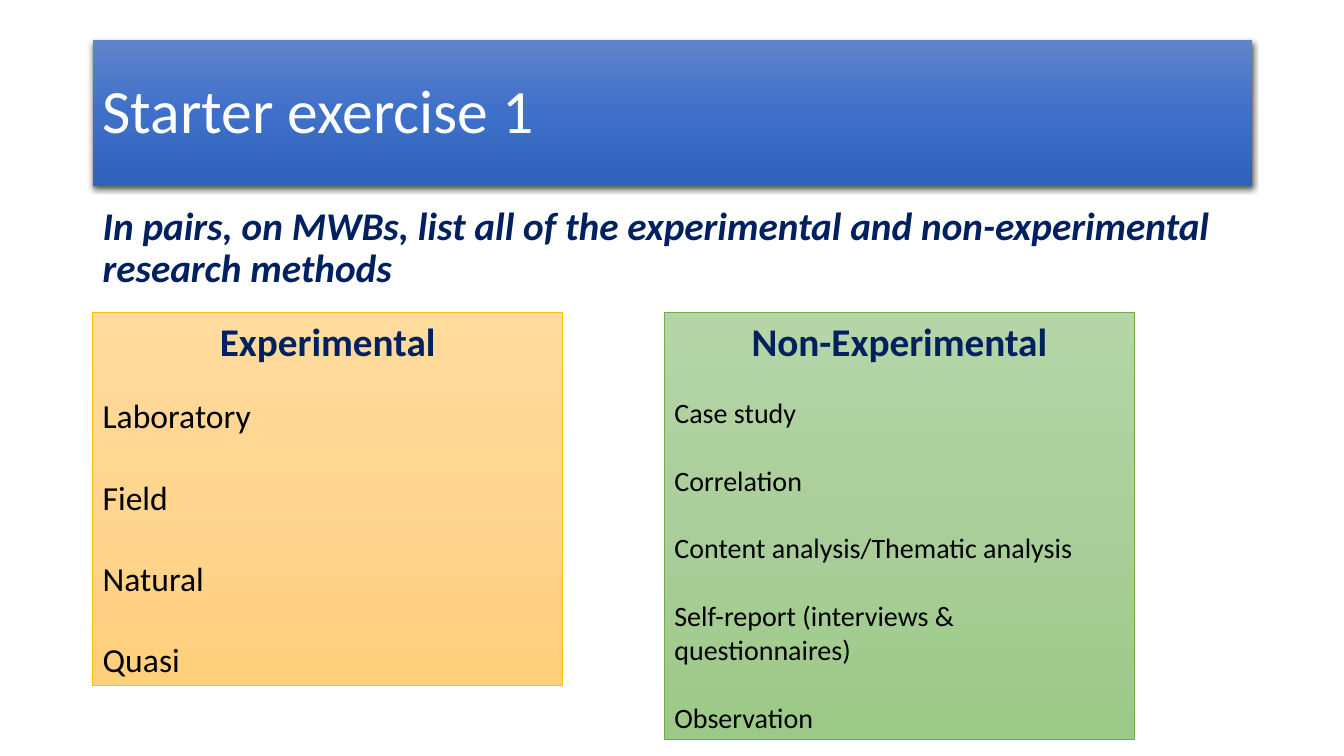
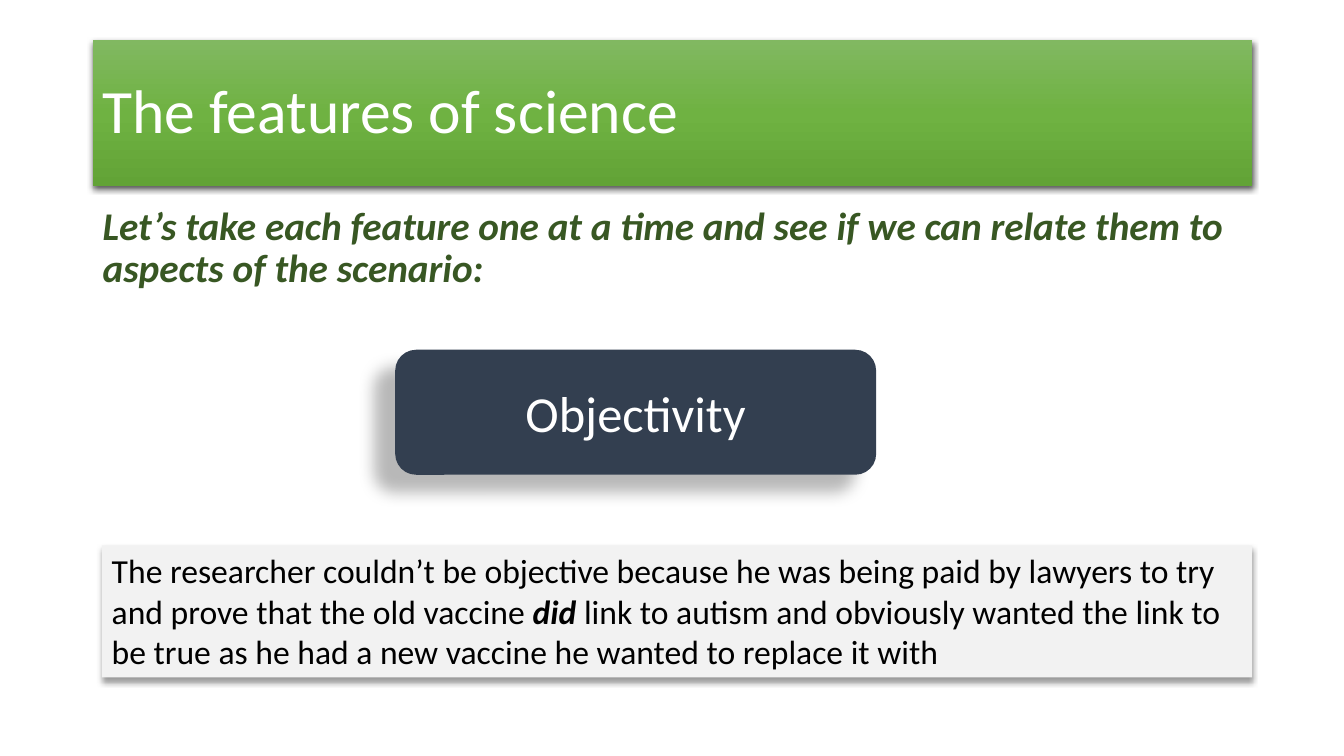
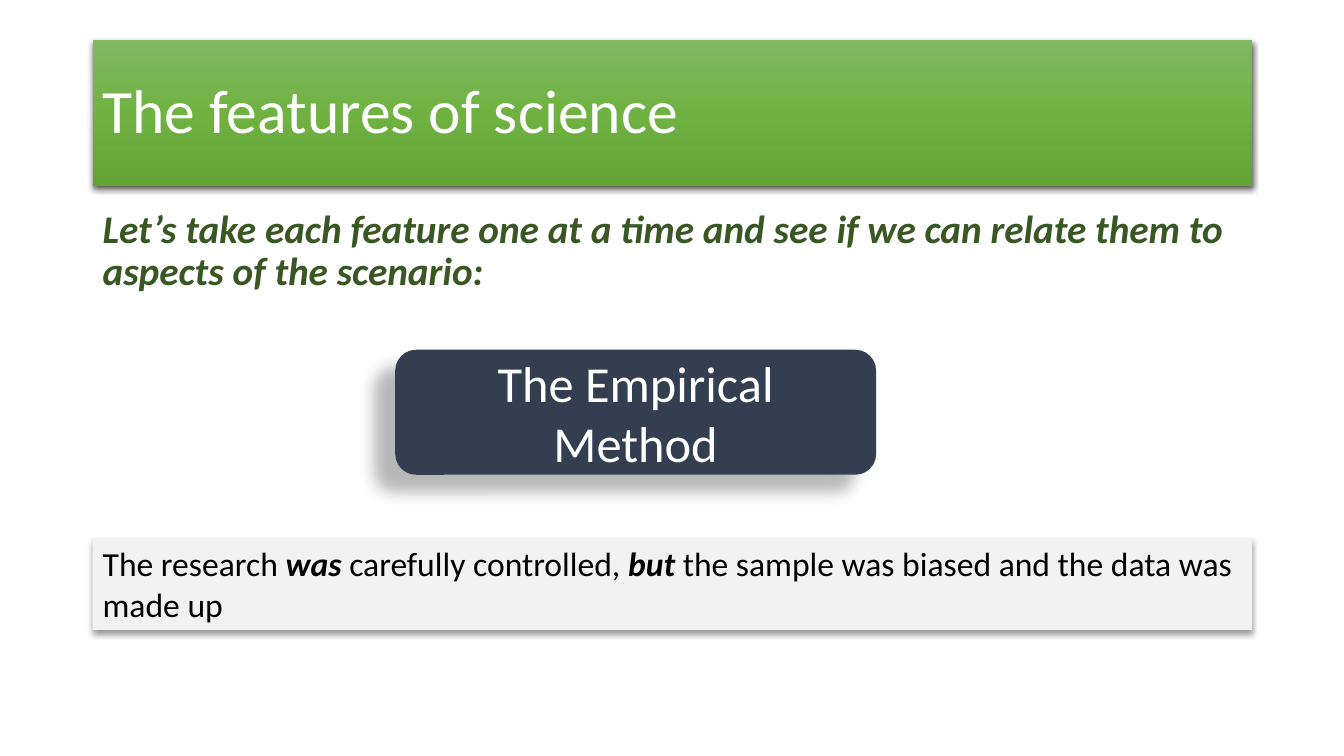
"""Build three lesson slides on research methods and the features of science."""
from copy import deepcopy

from lxml import etree
from pptx import Presentation
from pptx.dml.color import RGBColor
from pptx.enum.shapes import MSO_SHAPE
from pptx.enum.text import MSO_ANCHOR, MSO_AUTO_SIZE, PP_ALIGN
from pptx.oxml.ns import qn
from pptx.util import Inches, Pt

RECT, ROUNDED = MSO_SHAPE.RECTANGLE, MSO_SHAPE.ROUNDED_RECTANGLE
TOP, MIDDLE = MSO_ANCHOR.TOP, MSO_ANCHOR.MIDDLE
LEFT, CENTER = PP_ALIGN.LEFT, PP_ALIGN.CENTER
GROW = MSO_AUTO_SIZE.SHAPE_TO_FIT_TEXT

FONT = "Calibri"
WHITE = RGBColor(0xFF, 0xFF, 0xFF)
BLACK = RGBColor(0x00, 0x00, 0x00)
NAVY = RGBColor(0x00, 0x20, 0x60)
DARK_GREEN = RGBColor(0x38, 0x57, 0x23)
SLATE = RGBColor(0x33, 0x3F, 0x50)
PALE_GREY = RGBColor(0xF2, 0xF2, 0xF2)
GOLD = RGBColor(0xFF, 0xC0, 0x00)
GREEN = RGBColor(0x70, 0xAD, 0x47)
BLUE_BAND = [RGBColor(0x61, 0x83, 0xCB), RGBColor(0x3E, 0x70, 0xCA), RGBColor(0x30, 0x62, 0xBB)]
GREEN_BAND = [RGBColor(0x81, 0xB8, 0x61), RGBColor(0x6F, 0xB2, 0x42), RGBColor(0x62, 0xA3, 0x36)]
GOLD_PANEL = [RGBColor(0xFF, 0xDB, 0x9E), RGBColor(0xFF, 0xD5, 0x90), RGBColor(0xFF, 0xD0, 0x7C)]
GREEN_PANEL = [RGBColor(0xB5, 0xD5, 0xA7), RGBColor(0xAA, 0xCE, 0x9A), RGBColor(0x9C, 0xC9, 0x87)]

MARGIN, CONTENT_W = 0.92, 11.5
TITLE_SHADOW = (63, 4.5, 1.5, 90)
FEATURE_SHADOW = (28, 11.8, 19.7, 141)
ANSWER_SHADOW = (40, 4, 3, 90)


def add_box(s, kind, at, colors, anchor=TOP, line=None, shadow=None):
    """Add a shape filled with one colour or a three-stop vertical gradient."""
    sp = s.shapes.add_shape(kind, *map(Inches, at))
    sp.shadow.inherit = False
    if len(colors) == 1:
        sp.fill.solid()
        sp.fill.fore_color.rgb = colors[0]
    else:
        sp.fill.gradient()
        sp.fill.gradient_angle = 270
        stop_list = sp._element.spPr.find(".//" + qn("a:gsLst"))
        stop_list.insert(1, deepcopy(stop_list[0]))
        for i, (stop, color) in enumerate(zip(sp.fill.gradient_stops, colors)):
            stop.position = i / 2
            stop.color.rgb = color
    if line:
        sp.line.color.rgb = line
        sp.line.width = Pt(0.5)
    else:
        sp.line.fill.background()
    if shadow:
        alpha, blur, dist, angle = shadow
        effects = sp._element.spPr.find(qn("a:effectLst"))
        outer = etree.SubElement(effects, qn("a:outerShdw"), blurRad=str(Pt(blur)),
                                 dist=str(Pt(dist)), dir=str(angle * 60000), rotWithShape="0")
        color = etree.SubElement(outer, qn("a:srgbClr"), val="000000")
        etree.SubElement(color, qn("a:alpha"), val=str(alpha * 1000))
    sp.text_frame.word_wrap = True
    sp.text_frame.vertical_anchor = anchor
    return sp


def style(p, size, color, align=LEFT, bold=None, italic=None):
    """Set the font and alignment of a paragraph."""
    p.alignment = align
    p.font.name, p.font.size, p.font.color.rgb = FONT, Pt(size), color
    p.font.bold, p.font.italic = bold, italic


prs = Presentation()
prs.slide_width, prs.slide_height = Inches(13.33), Inches(7.5)

FEATURES_INTRO = ("Let’s take each feature one at a time and see if we can "
                  "relate them to aspects of the scenario:")
headers = [
    ("Starter exercise 1", BLUE_BAND, NAVY, 2,
     "In pairs, on MWBs, list all of the experimental and non-experimental research methods"),
    ("The features of science", GREEN_BAND, DARK_GREEN, 2, FEATURES_INTRO),
    ("The features of science", GREEN_BAND, DARK_GREEN, 2.03, FEATURES_INTRO),
]
slides = []
for title, band, color, intro_top, intro in headers:
    s = prs.slides.add_slide(prs.slide_layouts[6])
    slides.append(s)
    sp = add_box(s, RECT, (MARGIN, 0.4, CONTENT_W, 1.45), band, MIDDLE, shadow=TITLE_SHADOW)
    p = sp.text_frame.paragraphs[0]
    p.text = title
    p.line_spacing = 0.9
    style(p, 44, WHITE)
    tf = s.shapes.add_textbox(*map(Inches, (MARGIN, intro_top, CONTENT_W, 1.1))).text_frame
    tf.word_wrap = True
    p = tf.paragraphs[0]
    p.text = intro
    p.line_spacing = 0.9
    style(p, 28, color, bold=True, italic=True)

panels = [
    (MARGIN, 3.7, GOLD_PANEL, GOLD, "Experimental", 24, 29.3,
     ["Laboratory", "Field", "Natural", "Quasi"]),
    (6.59, 4.24, GREEN_PANEL, GREEN, "Non-Experimental", 20, 24.4,
     ["Case study", "Correlation", "Content analysis/Thematic analysis",
      "Self-report (interviews & questionnaires)", "Observation"]),
]
for left, height, colors, line, heading, size, gap, methods in panels:
    tf = add_box(slides[0], RECT, (left, 3.1, 4.66, height), colors, line=line).text_frame
    tf.auto_size = GROW
    p = tf.paragraphs[0]
    p.text = heading
    style(p, 28, NAVY, CENTER, bold=True)
    for i, method in enumerate(methods):
        p = tf.add_paragraph()
        p.text = method
        p.space_before = Pt(gap if i else 22)
        style(p, size, BLACK)

features = [
    ("Objectivity", (1.01, 5.41, 11.41, 1.31), [
        ("The researcher couldn’t be objective because he was being paid by lawyers to try "
         "and prove that the old vaccine ", False),
        ("did ", True),
        ("link to autism and obviously wanted the link to be true as he had a new vaccine "
         "he wanted to replace it with", False)]),
    ("The Empirical Method", (MARGIN, 5.34, CONTENT_W, 0.91), [
        ("The research ", False), ("was", True), (" carefully controlled, ", False),
        ("but ", True), ("the sample was biased and the data was made up", False)]),
]
for s, (feature, answer_at, answer) in zip(slides[1:], features):
    sp = add_box(s, ROUNDED, (3.92, 3.47, 4.77, 1.24), [SLATE], MIDDLE, shadow=FEATURE_SHADOW)
    p = sp.text_frame.paragraphs[0]
    p.text = feature
    style(p, 36, WHITE, CENTER)
    tf = add_box(s, RECT, answer_at, [PALE_GREY], shadow=ANSWER_SHADOW).text_frame
    tf.auto_size = GROW
    p = tf.paragraphs[0]
    style(p, 24, BLACK)
    for text, stressed in answer:
        r = p.add_run()
        r.text = text
        if stressed:
            r.font.bold = r.font.italic = True

prs.save("out.pptx")
